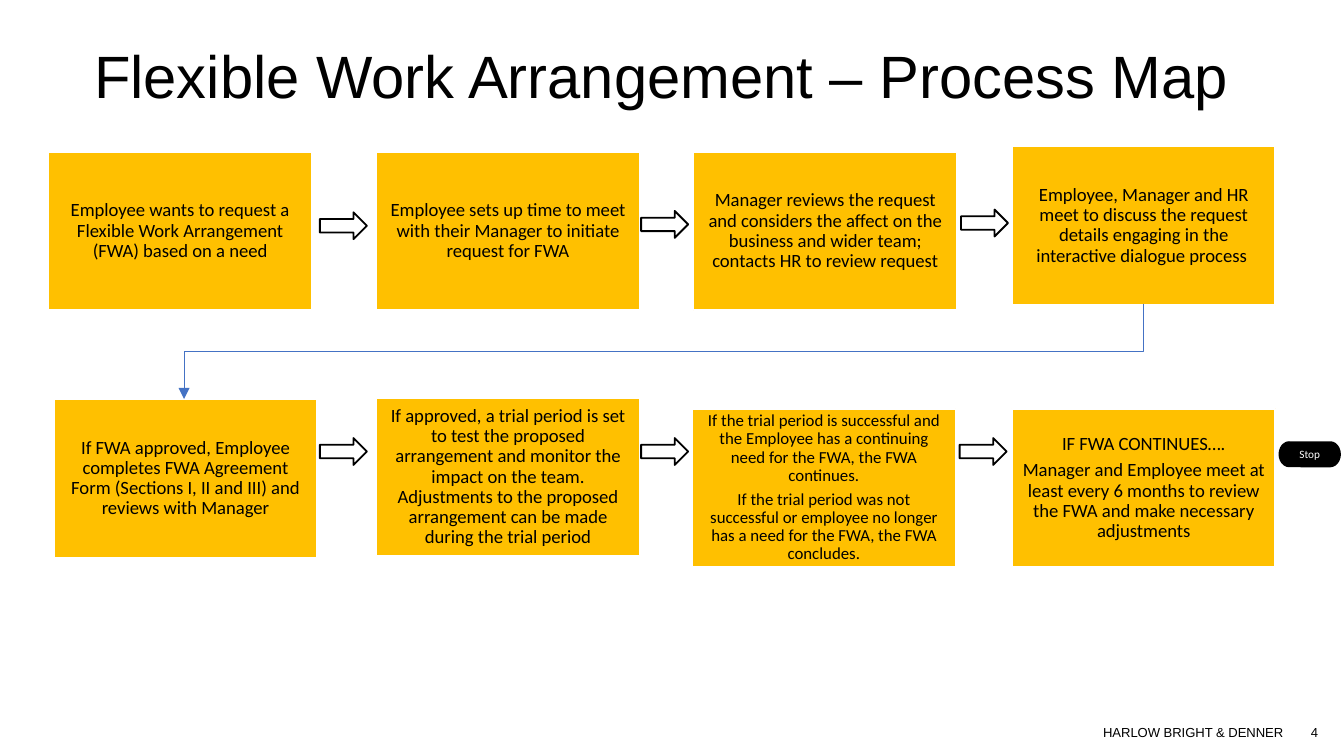
from lxml import etree
from pptx import Presentation
from pptx import util as u
from pptx.dml.color import RGBColor
from pptx.enum import shapes, text
from pptx.oxml.ns import qn

HUES = {"gold": "FFC000", "ink": "000000", "paper": "FFFFFF", "blue": "4472C4"}
UNIT = u.Inches(0.1)
WIDE, TALL = 100, 56.25
STEP_W, STEP_H = 19.6, 11.8
ARROW_W, ARROW_H = 3.5, 2

STEPS = [
    (3.6, 11.3, 10, ["Employee wants to request a Flexible Work Arrangement (FWA) based on a need"]),
    (28, 11.3, 10, ["Employee sets up time to meet with their Manager to initiate request for FWA"]),
    (51.6, 11.3, 10, ["Manager reviews the request and considers the affect on the business and wider team; contacts HR to review request"]),
    (75.3, 10.9, 10, ["Employee, Manager and HR meet to discuss the request details engaging in the interactive dialogue process "]),
    (4, 29.7, 10, ["If FWA approved, Employee completes FWA Agreement Form (Sections I, II and III) and reviews with Manager"]),
    (28, 29.6, 10, ["If approved, a trial period is set to test the proposed arrangement and monitor the impact on the team. Adjustments to the proposed arrangement can be made during the trial period"]),
    (51.5, 30.4, 9, ["If the trial period is successful and the Employee has a continuing need for the FWA, the FWA continues.",
                     "If the trial period was not successful or employee no longer has a need for the FWA, the FWA concludes."]),
    (75.3, 30.4, 10, ["IF FWA CONTINUES….",
                      "Manager and Employee meet at least every 6 months to review the FWA and make necessary adjustments"]),
]
ARROWS = [(23.8, 15.8), (47.7, 15.7), (71.5, 15.6),
          (23.8, 32.6), (47.7, 32.6), (71.4, 32.6)]


def span(*cells):
    return [int(c * UNIT) for c in cells]


def hue(name):
    return RGBColor.from_string(HUES[name])


def write(frame, lines, size, font, tint, align, lead=1.0, after=0, inset=None):
    frame.word_wrap = True
    frame.auto_size = text.MSO_AUTO_SIZE.NONE
    if inset is not None:
        frame.margin_left = frame.margin_right = u.Inches(inset)
        frame.margin_top = frame.margin_bottom = u.Inches(inset)
    for i, line in enumerate(lines):
        para = frame.add_paragraph() if i else frame.paragraphs[0]
        para.alignment = align
        para.line_spacing = lead
        para.space_before = u.Pt(0)
        para.space_after = u.Pt(after)
        run = para.add_run()
        run.text = line
        run.font.size = u.Pt(size)
        run.font.name = font
        run.font.color.rgb = hue(tint)


def block(slide, kind, box, fill, edge):
    shape = slide.shapes.add_shape(kind, *span(*box))
    shape.shadow.inherit = False
    shape.fill.solid()
    shape.fill.fore_color.rgb = hue(fill)
    shape.line.color.rgb = hue(edge)
    shape.line.width = u.Pt(1)
    shape.text_frame.vertical_anchor = text.MSO_ANCHOR.MIDDLE
    return shape


def head(slide, box):
    title = slide.shapes.title
    title.left, title.top, title.width, title.height = span(*box)
    title.text_frame.vertical_anchor = text.MSO_ANCHOR.TOP
    write(title.text_frame, ["Flexible Work Arrangement – Process Map"],
          32, "Arial", "ink", text.PP_ALIGN.LEFT, 0.9)


def step(slide, box, size, lines):
    shape = block(slide, shapes.MSO_SHAPE.RECTANGLE, box, "gold", "paper")
    write(shape.text_frame, lines, size, "Calibri", "ink",
          text.PP_ALIGN.CENTER, 0.9, 0.35 * size, 0.08)


def stop(slide, box):
    shape = block(slide, shapes.MSO_SHAPE.FLOWCHART_TERMINATOR, box, "ink", "ink")
    write(shape.text_frame, ["Stop"], 6, "Calibri", "paper", text.PP_ALIGN.CENTER)


def bend(slide, start, end):
    midx, midy = (start[0] + end[0]) / 2, (start[1] + end[1]) / 2
    run, drop = start[0] - end[0], end[1] - start[1]
    line = slide.shapes.add_connector(
        shapes.MSO_CONNECTOR.ELBOW,
        *span(midx - drop / 2, midy - run / 2, midx + drop / 2, midy + run / 2))
    line.line.color.rgb = hue("blue")
    line.line.width = u.Pt(0.5)
    props = line._element.spPr
    props.find(qn("a:xfrm")).set("rot", "5400000")
    tip = etree.SubElement(props.find(qn("a:ln")), qn("a:tailEnd"))
    tip.set("type", "triangle")
    etree.SubElement(props, qn("a:effectLst"))


def foot(slide, box):
    note = slide.shapes.add_textbox(*span(*box))
    frame = note.text_frame
    write(frame, ["\tHARLOW BRIGHT & DENNER\t4"], 7, "Arial", "ink",
          text.PP_ALIGN.LEFT)
    props = frame.paragraphs[0]._p.get_or_add_pPr()
    tabs = etree.SubElement(props, qn("a:tabLst"))
    for place in span(box[2] - 4.7, box[2] - 2.1):
        etree.SubElement(tabs, qn("a:tab"), pos=str(place), algn="r")


def main():
    deck = Presentation()
    deck.slide_width, deck.slide_height = span(WIDE, TALL)
    slide = deck.slides.add_slide(deck.slide_layouts[5])
    foot(slide, (55, 53.4, 44.2, 2.2))
    head(slide, (6, 3, 91.6, 9.5))
    for left, top, size, lines in STEPS:
        step(slide, (left, top, STEP_W, STEP_H), size, lines)
    for left, top in ARROWS:
        block(slide, shapes.MSO_SHAPE.RIGHT_ARROW,
              (left, top, ARROW_W, ARROW_H), "paper", "ink")
    stop(slide, (95.2, 32.9, 4.5, 1.8))
    bend(slide, (85.1, 22.6), (13.7, 29.7))
    deck.save("out.pptx")


if __name__ == "__main__":
    main()
